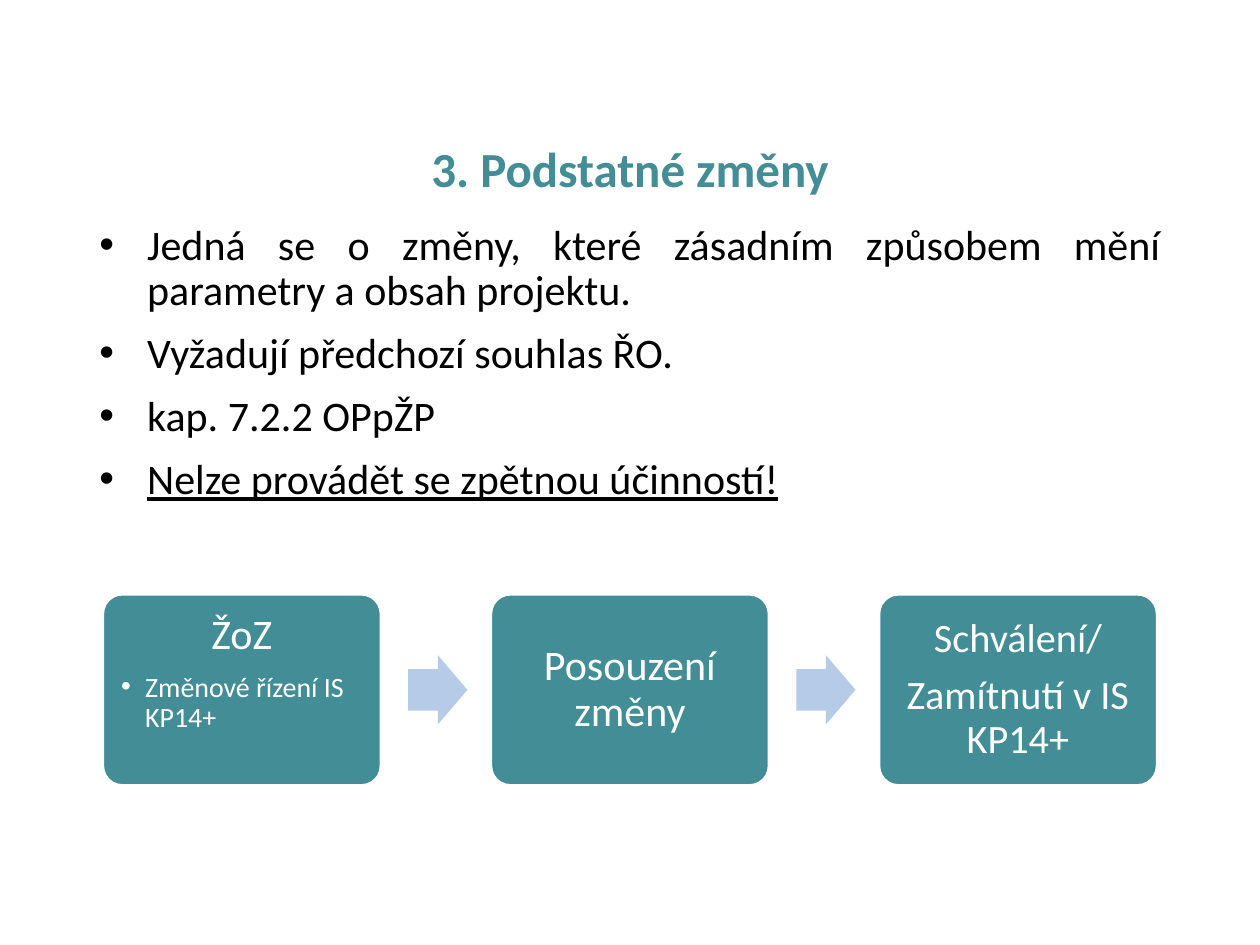
import pptx
import pptx.util
import pptx.dml.color
import pptx.enum.shapes
import pptx.enum.text
import pptx.oxml.ns
from lxml import etree

Inches = pptx.util.Inches
Pt = pptx.util.Pt
ALIGN = pptx.enum.text.PP_ALIGN
ANCHOR = pptx.enum.text.MSO_ANCHOR
SHAPE = pptx.enum.shapes.MSO_SHAPE


def color(hex_string):
    return pptx.dml.color.RGBColor.from_string(hex_string)


class Deck:
    FONT = "Calibri"
    TEAL, PALE_BLUE, WHITE, BLACK = "428D96", "B5CBE7", "FFFFFF", "000000"

    def __init__(self):
        self.presentation = pptx.Presentation()
        self.presentation.slide_width = Inches(10)
        self.presentation.slide_height = Inches(7.5)
        self.slide = self.presentation.slides.add_slide(self.presentation.slide_layouts[5])

    def format(self, paragraph, size, ink, align, before=0, after=0, bold=False, underline=None):
        paragraph.alignment = align
        paragraph.line_spacing = 0.9
        paragraph.space_before, paragraph.space_after = Pt(before), Pt(after)
        for run in paragraph.runs:
            font = run.font
            font.name, font.size, font.bold, font.underline = self.FONT, Pt(size), bold, underline
            font.color.rgb = color(ink)

    def bullet(self, paragraph, indent):
        properties = paragraph._p.get_or_add_pPr()
        properties.set("marL", str(Inches(indent)))
        properties.set("indent", str(-Inches(indent)))
        qn = pptx.oxml.ns.qn
        etree.SubElement(properties, qn("a:buFont")).set("typeface", "Arial")
        etree.SubElement(properties, qn("a:buChar")).set("char", "•")

    def title(self, text, left, top, width, height):
        title = self.slide.shapes.title
        title.left, title.top = Inches(left), Inches(top)
        title.width, title.height = Inches(width), Inches(height)
        title.text_frame.text = text
        title.text_frame.vertical_anchor = ANCHOR.MIDDLE
        self.format(title.text_frame.paragraphs[0], 28, self.TEAL, ALIGN.CENTER, bold=True)

    def bullets(self, items, left, top, width, height, underlined):
        box = self.slide.shapes.add_textbox(Inches(left), Inches(top), Inches(width), Inches(height))
        frame = box.text_frame
        frame.word_wrap = True
        frame.text = "\n".join(items)
        for index, paragraph in enumerate(frame.paragraphs):
            self.bullet(paragraph, 0.38)
            self.format(paragraph, 24, self.BLACK, ALIGN.JUSTIFY, before=10 if index else 0,
                        underline=True if items[index] in underlined else None)

    def shape(self, kind, left, top, width, height, fill, adjustments):
        shape = self.slide.shapes.add_shape(
            kind, Inches(left), Inches(top), Inches(width), Inches(height))
        shape.shadow.inherit = False
        shape.fill.solid()
        shape.fill.fore_color.rgb = color(fill)
        shape.line.fill.background()
        for index, value in enumerate(adjustments):
            shape.adjustments[index] = value
        return shape

    def step(self, headings, detail, size, left, top, width, height):
        card = self.shape(SHAPE.ROUNDED_RECTANGLE, left, top, width, height, self.TEAL, [0.1])
        card.line.color.rgb = color(self.WHITE)
        card.line.width = Pt(1)
        frame = card.text_frame
        frame.word_wrap = True
        frame.margin_left = frame.margin_right = Inches(0.1)
        frame.margin_top = frame.margin_bottom = Inches(0.1)
        frame.vertical_anchor = ANCHOR.TOP if detail else ANCHOR.MIDDLE
        frame.text = "\n".join(headings)
        for paragraph in frame.paragraphs:
            self.format(paragraph, size, self.WHITE, ALIGN.CENTER, after=0.35 * size)
        if detail:
            note = frame.add_paragraph()
            note.text = detail
            note.level = 1
            self.bullet(note, 0.19)
            self.format(note, 16, self.WHITE, ALIGN.LEFT, after=2.4)

    def arrow(self, left, top, width, height):
        self.shape(SHAPE.RIGHT_ARROW, left, top, width, height, self.PALE_BLUE, [0.6, 0.5])


def main():
    deck = Deck()

    # Heading and key points
    deck.title("3. Podstatné změny", 0.69, 0.87, 8.62, 0.98)
    warning = "Nelze provádět se zpětnou účinností!"
    points = [
        "Jedná se o změny, které zásadním způsobem mění parametry a obsah projektu.",
        "Vyžadují předchozí souhlas ŘO.",
        "kap. 7.2.2 OPpŽP",
        warning,
    ]
    deck.bullets(points, 0.69, 1.73, 8.62, 4.38, [warning])

    # Approval process
    steps = [
        (["ŽoZ"], "Změnové řízení IS KP14+", 24),
        (["Posouzení změny"], None, 24),
        (["Schválení/", "Zamítnutí v IS KP14+"], None, 23),
    ]
    first_left, pitch, top, width, height = 0.82, 3.08, 4.72, 2.2, 1.51
    arrow_height = 0.55
    for index, (headings, detail, size) in enumerate(steps):
        left = first_left + index * pitch
        deck.step(headings, detail, size, left, top, width, height)
        if index < len(steps) - 1:
            deck.arrow(left + width + 0.22, top + (height - arrow_height) / 2, 0.47, arrow_height)

    deck.presentation.save("out.pptx")


if __name__ == "__main__":
    main()
